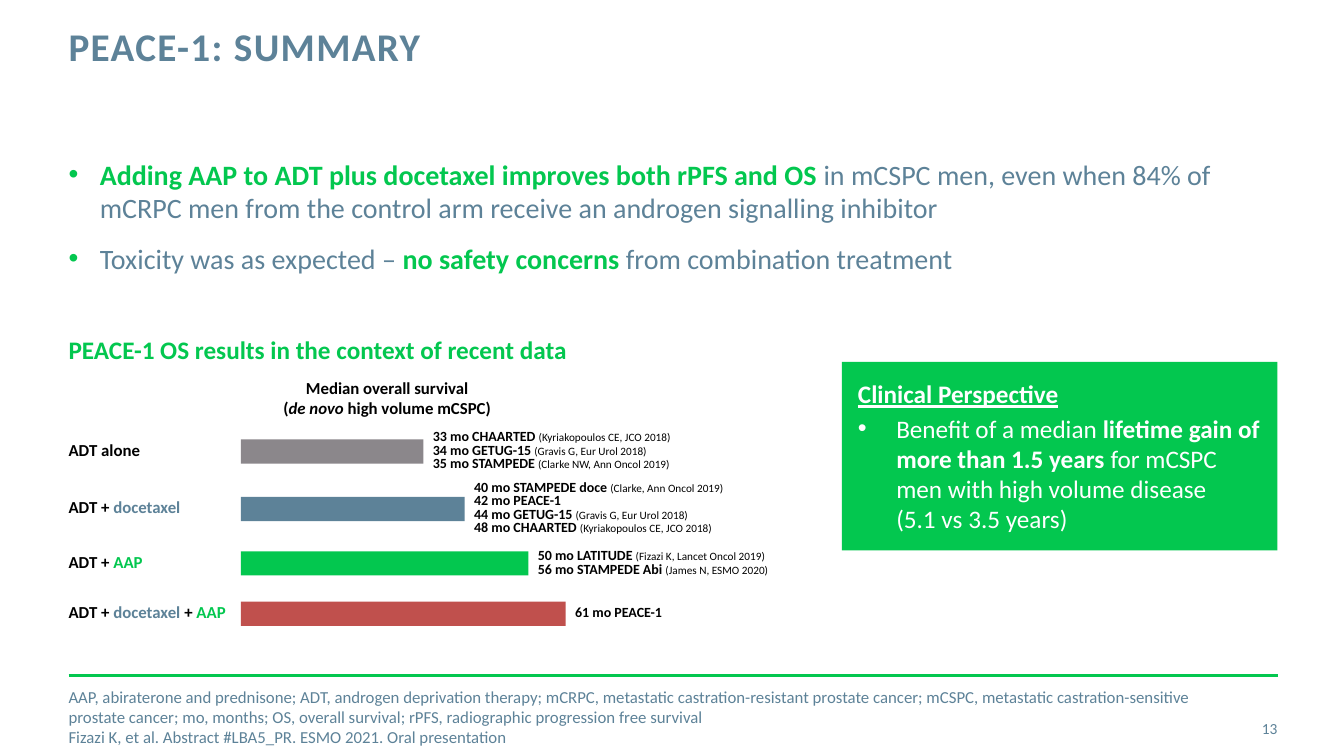
import dataclasses

import lxml.etree
import pptx
import pptx.dml.color
import pptx.enum.shapes
import pptx.enum.text
import pptx.oxml.ns
import pptx.util

ALIGN = pptx.enum.text.PP_ALIGN
ANCHOR = pptx.enum.text.MSO_ANCHOR
AUTO_SIZE = pptx.enum.text.MSO_AUTO_SIZE
WIDTH, HEIGHT = 13.33, 7.5
MARGIN = 5.1
BAR_LEFT, BAR_HEIGHT, BAR_GAP = 17.93, 3.2, 0.7
EVIDENCE_LINE = 1.8


@dataclasses.dataclass(frozen=True)
class Theme:
    font: str = "Calibri"
    green: str = "03C74F"
    slate: str = "5D8298"
    grey: str = "8B878B"
    red: str = "C0504D"
    black: str = "000000"
    white: str = "FFFFFF"
    title: int = 28
    body: int = 20
    heading: int = 18
    label: int = 12
    number: int = 11
    evidence: int = 10
    citation: int = 8


THEME = Theme()


def rgb(color):
    return pptx.dml.color.RGBColor.from_string(color)


def across(share):
    return pptx.util.Inches(WIDTH * share / 100)


def down(share):
    return pptx.util.Inches(HEIGHT * share / 100)


def frame(left, top, width, height):
    return across(left), down(top), across(width), down(height)


def style(size, color, **extra):
    return {"name": THEME.font, "size": pptx.util.Pt(size), "color": color, **extra}


TITLE = style(THEME.title, THEME.slate, bold=True)
BODY = style(THEME.body, THEME.slate)
BODY_STRONG = style(THEME.body, THEME.green, bold=True)
HEADING = style(THEME.heading, THEME.green, bold=True)
NOTE = style(THEME.label, THEME.slate)
NUMBER = style(THEME.number, THEME.slate)
LABEL = style(THEME.label, THEME.black, bold=True)
LABEL_ITALIC = {**LABEL, "italic": True}
DOCETAXEL = {**LABEL, "color": THEME.slate}
AAP = {**LABEL, "color": THEME.green}
EVIDENCE = style(THEME.evidence, THEME.black, bold=True)
CITATION = style(THEME.citation, THEME.black)
CALLOUT = style(THEME.heading, THEME.white)
CALLOUT_STRONG = {**CALLOUT, "bold": True}
CALLOUT_TITLE = {**CALLOUT_STRONG, "underline": True}


def set_format(target, values):
    for name, value in values.items():
        if name == "color":
            target.color.rgb = rgb(value)
        else:
            setattr(target, name, value)


def add_bullet(paragraph, indent, color):
    properties = paragraph._p.get_or_add_pPr()
    hanging = pptx.util.Inches(indent)
    properties.set("marL", str(hanging))
    properties.set("indent", str(-hanging))
    tag = pptx.oxml.ns.qn
    bullet_color = lxml.etree.SubElement(properties, tag("a:buClr"))
    lxml.etree.SubElement(bullet_color, tag("a:srgbClr"), val=color)
    lxml.etree.SubElement(properties, tag("a:buFont"), typeface="Arial")
    lxml.etree.SubElement(properties, tag("a:buChar"), char="•")


def write(shape, paragraphs, bullets=None, paragraph_format=None, **frame_format):
    text_frame = shape.text_frame
    margins = dict.fromkeys(("margin_left", "margin_top", "margin_right", "margin_bottom"), 0)
    set_format(text_frame, {**margins, "word_wrap": True, **frame_format})
    for position, runs in enumerate(paragraphs):
        paragraph = text_frame.add_paragraph() if position else text_frame.paragraphs[0]
        set_format(paragraph, {"alignment": ALIGN.LEFT, **(paragraph_format or {})})
        if bullets and position >= bullets["start"]:
            add_bullet(paragraph, bullets["indent"], bullets["color"])
        for text, font_format in runs:
            for line_index, line in enumerate(text.split("\n")):
                if line_index:
                    paragraph.add_line_break()
                run = paragraph.add_run()
                run.text = line
                set_format(run.font, font_format)
    return text_frame


def add_text(slide, place, paragraphs, **options):
    return write(slide.shapes.add_textbox(*frame(*place)), paragraphs, **options)


def add_label(slide, place, paragraphs, **options):
    return add_text(slide, place, paragraphs, word_wrap=False,
                    auto_size=AUTO_SIZE.SHAPE_TO_FIT_TEXT, **options)


def add_block(slide, place, color):
    block = slide.shapes.add_shape(pptx.enum.shapes.MSO_SHAPE.RECTANGLE, *frame(*place))
    block.shadow.inherit = False
    block.fill.solid()
    block.fill.fore_color.rgb = rgb(color)
    block.line.fill.background()
    return block


def add_rule(slide, left, right, top):
    rule = slide.shapes.add_connector(pptx.enum.shapes.MSO_CONNECTOR.STRAIGHT,
                                      across(left), down(top), across(right), down(top))
    set_format(rule.line, {"color": THEME.green, "width": pptx.util.Pt(2)})
    lxml.etree.SubElement(rule._element.spPr, pptx.oxml.ns.qn("a:effectLst"))


def add_survival_row(slide, top, length, color, label, label_width, evidence, evidence_width):
    add_label(slide, (MARGIN, top, label_width, 2.67), [label])
    add_block(slide, (BAR_LEFT, top, length, BAR_HEIGHT), color)
    lines = sum(text.count("\n") for runs in evidence for text, _ in runs) + len(evidence)
    height = EVIDENCE_LINE * lines
    place = (BAR_LEFT + length + BAR_GAP, top + (BAR_HEIGHT - height) / 2, evidence_width, height)
    add_label(slide, place, evidence, paragraph_format={"line_spacing": 0.8})


def add_callout(slide):
    block = add_block(slide, (62.64, 47.87, 32.4, 24.93), THEME.green)
    inset = pptx.util.Inches(0.16)
    text_frame = write(block, [
        [("Clinical Perspective", CALLOUT_TITLE)],
        [("Benefit of a median ", CALLOUT),
         ("lifetime gain of more than 1.5 years ", CALLOUT_STRONG),
         ("for mCSPC men with high volume disease \n(5.1 vs 3.5 years)", CALLOUT)],
    ], bullets={"start": 1, "indent": 0.38, "color": THEME.white},
        margin_left=inset, margin_top=inset, margin_bottom=inset,
        margin_right=pptx.util.Inches(0.1), vertical_anchor=ANCHOR.MIDDLE,
        auto_size=AUTO_SIZE.SHAPE_TO_FIT_TEXT)
    text_frame.paragraphs[0].space_after = pptx.util.Pt(3)


def main():
    presentation = pptx.Presentation()
    presentation.slide_width, presentation.slide_height = across(100), down(100)
    slide = presentation.slides.add_slide(presentation.slide_layouts[6])

    add_rule(slide, MARGIN, 95.1, 89.33)
    body = add_text(slide, (MARGIN, 20.8, 89.95, 66), [
        [("Adding AAP to ADT plus docetaxel improves both rPFS and OS ", BODY_STRONG),
         ("in mCSPC men, even when 84% of mCRPC men from the control arm receive "
          "an androgen signalling inhibitor", BODY)],
        [("Toxicity was as expected – ", BODY), ("no safety concerns ", BODY_STRONG),
         ("from combination treatment", BODY)],
    ], bullets={"start": 0, "indent": 0.31, "color": THEME.green})
    body.paragraphs[1].space_before = pptx.util.Pt(12)
    title = add_text(slide, (MARGIN, 3.6, 71.7, 11.73), [[("PEACE-1: SUMMARY", TITLE)]],
                     paragraph_format={"line_spacing": pptx.util.Pt(30)})
    title.paragraphs[0].runs[0]._r.get_or_add_rPr().set("spc", "100")
    add_text(slide, (88.6, 93.73, 6.45, 5.33), [[("13", NUMBER)]],
             paragraph_format={"alignment": ALIGN.RIGHT}, vertical_anchor=ANCHOR.MIDDLE)
    add_text(slide, (MARGIN, 92.13, 85.67, 5.33), [
        [("AAP, abiraterone and prednisone; ADT, androgen deprivation therapy; mCRPC, metastatic "
          "castration-resistant prostate cancer; mCSPC, metastatic castration-sensitive prostate "
          "cancer; mo, months; OS, overall survival; rPFS, radiographic progression free survival",
          NOTE)],
        [("Fizazi K, et al. Abstract #LBA5_PR. ESMO 2021. Oral presentation", NOTE)],
    ], vertical_anchor=ANCHOR.MIDDLE)
    add_callout(slide)
    add_label(slide, (MARGIN, 44.67, 37.36, 3.6),
              [[("PEACE-1 OS results in the context of recent data", HEADING)]],
              paragraph_format={"line_spacing": 0.9})
    add_label(slide, (20.86, 50, 15.9, 5.33),
              [[("Median overall survival\n(", LABEL), ("de novo ", LABEL_ITALIC),
                ("high volume mCSPC)", LABEL)]], paragraph_format={"alignment": ALIGN.CENTER})

    survival_rows = [
        (58.13, 13.58, THEME.grey, [("ADT alone", LABEL)], 5.4, [
            [("33 mo CHAARTED ", EVIDENCE), ("(Kyriakopoulos CE, JCO 2018)", CITATION)],
            [("34 mo GETUG-15 ", EVIDENCE), ("(Gravis G, Eur Urol 2018)", CITATION)],
            [("35 mo STAMPEDE ", EVIDENCE), ("(Clarke NW, Ann Oncol 2019)", CITATION)]], 17.85),
        (65.73, 16.65, THEME.slate, [("ADT + ", LABEL), ("docetaxel", DOCETAXEL)], 8.4, [
            [("40 mo STAMPEDE doce ", EVIDENCE), ("(Clarke, Ann Oncol 2019)", CITATION)],
            [("42 mo PEACE-1 \n44 mo GETUG-15 ", EVIDENCE),
             ("(Gravis G, Eur Urol 2018)", CITATION)],
            [("48 mo CHAARTED ", EVIDENCE), ("(Kyriakopoulos CE, JCO 2018)", CITATION)]], 18.83),
        (72.93, 21.38, THEME.green, [("ADT + ", LABEL), ("AAP", AAP)], 5.55, [
            [("50 mo LATITUDE ", EVIDENCE), ("(Fizazi K, Lancet Oncol 2019)", CITATION)],
            [("56 mo STAMPEDE Abi ", EVIDENCE), ("(James N, ESMO 2020)", CITATION)]], 17.4),
        (79.6, 24.16, THEME.red, [("ADT + ", LABEL), ("docetaxel ", DOCETAXEL), ("+ ", LABEL),
                                  ("AAP", AAP)], 11.85, [[("61 mo PEACE-1", EVIDENCE)]], 6.6),
    ]
    for row in survival_rows:
        add_survival_row(slide, *row)
    presentation.save("out.pptx")


if __name__ == "__main__":
    main()
